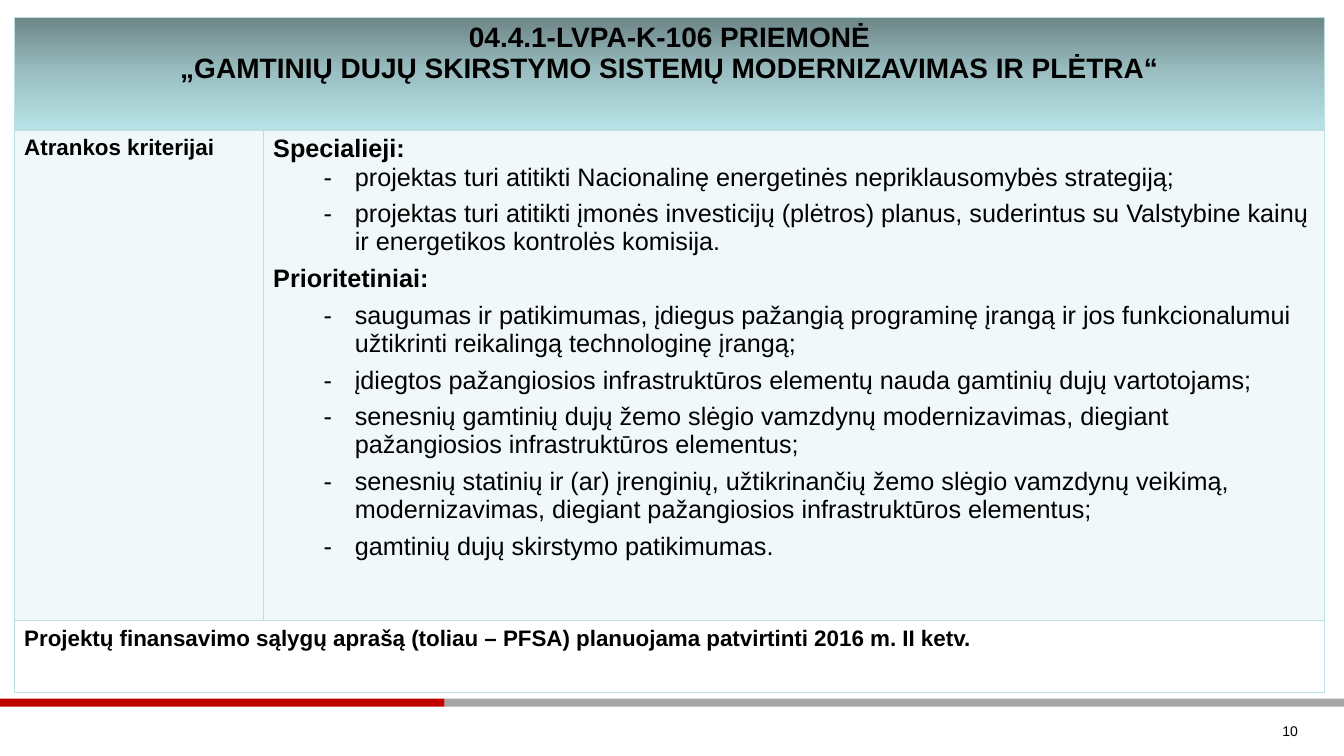
from lxml.etree import SubElement
from pptx import Presentation
from pptx.dml.color import RGBColor
from pptx.enum.shapes import MSO_SHAPE
from pptx.enum.text import MSO_ANCHOR, PP_ALIGN
from pptx.oxml.ns import qn
from pptx.util import Inches, Pt

FONT = "Arial"
TEAL = "BBE0E3"
COLUMNS = [2.47, 10.53]
ROWS = [1.12, 4.87, 0.71]
HEADER_STOPS = [(0, "6D8688"), (50, "9BBFC2"), (100, "B8E3E6")]

TITLE = [
    "04.4.1-LVPA-K-106 PRIEMONĖ",
    "„GAMTINIŲ DUJŲ SKIRSTYMO SISTEMŲ MODERNIZAVIMAS IR PLĖTRA“",
]
SPECIAL = [
    "projektas turi atitikti Nacionalinę energetinės nepriklausomybės strategiją;",
    "projektas turi atitikti įmonės investicijų (plėtros) planus, suderintus su "
    "Valstybine kainų ir energetikos kontrolės komisija.",
]
PRIORITY = [
    "saugumas ir patikimumas, įdiegus pažangią programinę įrangą ir jos "
    "funkcionalumui užtikrinti reikalingą technologinę įrangą;",
    "įdiegtos pažangiosios infrastruktūros elementų nauda gamtinių dujų vartotojams;",
    "senesnių gamtinių dujų žemo slėgio vamzdynų modernizavimas, diegiant "
    "pažangiosios infrastruktūros elementus;",
    "senesnių statinių ir (ar) įrenginių, užtikrinančių žemo slėgio vamzdynų "
    "veikimą, modernizavimas, diegiant pažangiosios infrastruktūros elementus;",
    "gamtinių dujų skirstymo patikimumas.",
]
FOOTNOTE = (
    "Projektų finansavimo sąlygų aprašą (toliau – PFSA) planuojama patvirtinti "
    "2016 m. II ketv."
)


def color(value):
    return RGBColor.from_string(value)


def add_bar(page, left, width, fill):
    bar = page.shapes.add_shape(
        MSO_SHAPE.RECTANGLE, Inches(left), Inches(6.93), Inches(width), Inches(0.08)
    )
    bar.shadow.inherit = False
    bar.fill.solid()
    bar.fill.fore_color.rgb = color(fill)
    bar.line.fill.background()


def add_dash(para):
    properties = para._p.get_or_add_pPr()
    properties.set("lvl", "1")
    properties.set("marL", str(Inches(0.81)))
    properties.set("indent", str(Inches(-0.31)))
    SubElement(properties, qn("a:buFont"), typeface=FONT)
    SubElement(properties, qn("a:buChar"), char="-")


def write(frame, lines, size, align=PP_ALIGN.LEFT):
    """Fill a frame with (text, bold, dash, space after) lines."""
    for index, (text, bold, dash, after) in enumerate(lines):
        para = frame.paragraphs[0] if index == 0 else frame.add_paragraph()
        if dash:
            add_dash(para)
        para.alignment = align
        para.space_after = Pt(after)
        span = para.add_run()
        span.text = text
        span.font.color.rgb = color("000000")
        for name, value in {"name": FONT, "size": Pt(size), "bold": bold}.items():
            setattr(span.font, name, value)


def heading(text, after=0):
    return text, True, False, after


def dashes(texts):
    return [(text, False, True, 6) for text in texts]


def set_borders(cell):
    properties = cell._tc.get_or_add_tcPr()
    for side in ("lnL", "lnR", "lnT", "lnB"):
        line = SubElement(properties, qn(f"a:{side}"), w=str(Pt(1)))
        solid = SubElement(line, qn("a:solidFill"))
        SubElement(solid, qn("a:srgbClr"), val=TEAL)


def fill_gradient(cell):
    gradient = SubElement(cell._tc.get_or_add_tcPr(), qn("a:gradFill"), rotWithShape="1")
    stops = SubElement(gradient, qn("a:gsLst"))
    for position, value in HEADER_STOPS:
        stop = SubElement(stops, qn("a:gs"), pos=str(position * 1000))
        SubElement(stop, qn("a:srgbClr"), val=value)
    SubElement(gradient, qn("a:lin"), ang=str(90 * 60000), scaled="0")


def fill_tint(cell):
    solid = SubElement(cell._tc.get_or_add_tcPr(), qn("a:solidFill"))
    tint = SubElement(solid, qn("a:srgbClr"), val=TEAL)
    SubElement(tint, qn("a:alpha"), val="20000")


def fill_none(cell):
    SubElement(cell._tc.get_or_add_tcPr(), qn("a:noFill"))


def add_criteria_table(page):
    table = page.shapes.add_table(
        len(ROWS), len(COLUMNS), Inches(0.14), Inches(0.17), Inches(13), Inches(6.7)
    ).table
    table.first_row = table.horz_banding = False
    for column, width in zip(table.columns, COLUMNS):
        column.width = Inches(width)
    for row, height, fill in zip(table.rows, ROWS, [fill_gradient, fill_tint, fill_none]):
        row.height = Inches(height)
        for cell in row.cells:
            set_borders(cell)
            fill(cell)
    for row in (0, 2):
        table.cell(row, 0).merge(table.cell(row, 1))

    # Cell texts
    criteria = [
        heading("Specialieji:"), *dashes(SPECIAL),
        heading("Prioritetiniai:", 6), *dashes(PRIORITY),
    ]
    write(table.cell(0, 0).text_frame, map(heading, TITLE), 20, PP_ALIGN.CENTER)
    write(table.cell(1, 0).text_frame, [heading("Atrankos kriterijai")], 16)
    write(table.cell(1, 1).text_frame, criteria, 18)
    write(table.cell(2, 0).text_frame, [heading(FOOTNOTE)], 16)


def add_page_number(page, number):
    box = page.shapes.add_textbox(Inches(9.86), Inches(7.01), Inches(3.11), Inches(0.49))
    frame = box.text_frame
    frame.word_wrap = True
    frame.vertical_anchor = MSO_ANCHOR.MIDDLE
    write(frame, [(number, False, False, 0)], 10, PP_ALIGN.RIGHT)


def main():
    deck = Presentation()
    deck.slide_width = Inches(13.33)
    deck.slide_height = Inches(7.5)
    page = deck.slides.add_slide(deck.slide_layouts[6])

    # Two-colour rule above the footer
    add_bar(page, 0, 4.41, "C00000")
    add_bar(page, 4.41, 8.92, "A6A6A6")

    # Content and footer
    add_criteria_table(page)
    add_page_number(page, "10")
    deck.save("out.pptx")


if __name__ == "__main__":
    main()
